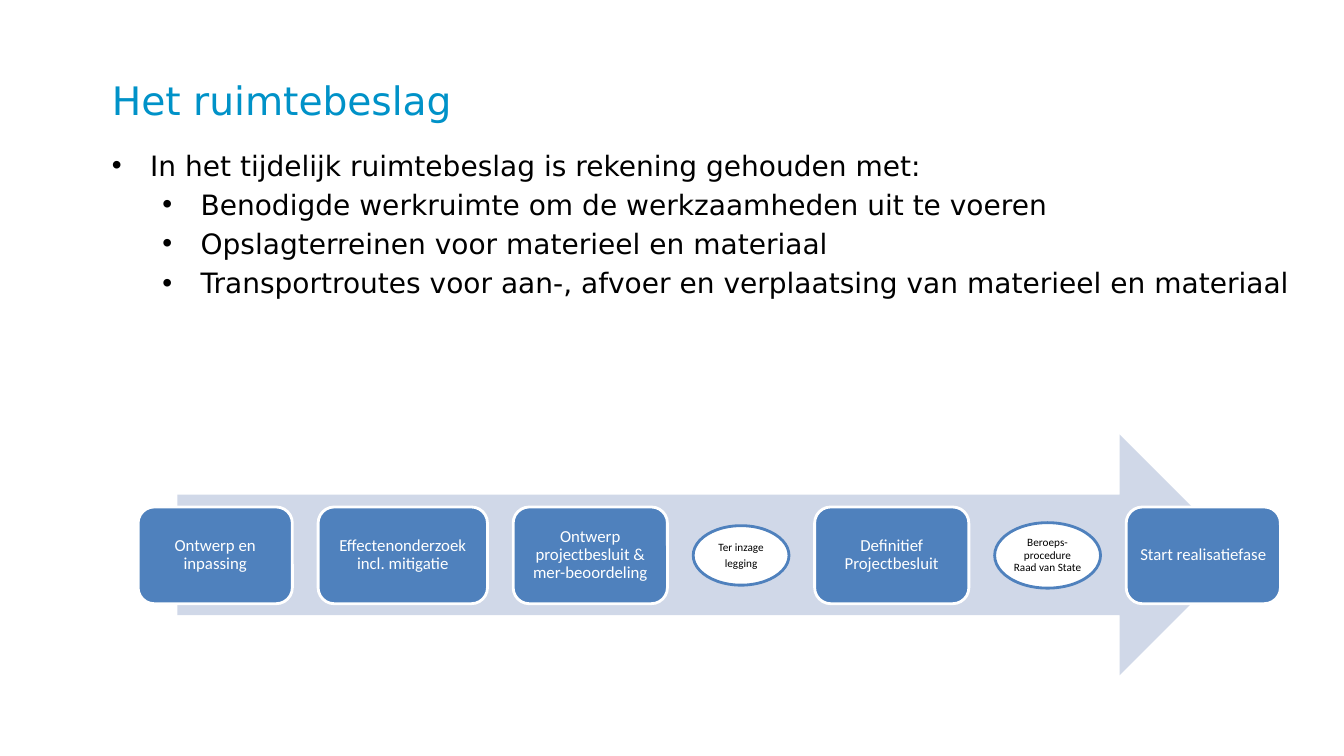
import pptx
import pptx.util
import pptx.dml.color
import pptx.enum.shapes
import pptx.enum.text
import pptx.oxml.ns
import lxml.etree

Inches = pptx.util.Inches
Pt = pptx.util.Pt
RGBColor = pptx.dml.color.RGBColor
Shape = pptx.enum.shapes.MSO_SHAPE
Align = pptx.enum.text.PP_ALIGN
Anchor = pptx.enum.text.MSO_ANCHOR

TITLE = "Het ruimtebeslag"
BULLETS = [
    (0, "In het tijdelijk ruimtebeslag is rekening gehouden met:"),
    (1, "Benodigde werkruimte om de werkzaamheden uit te voeren"),
    (1, "Opslagterreinen voor materieel en materiaal"),
    (1, "Transportroutes voor aan-, afvoer en verplaatsing van materieel en materiaal"),
]
STEPS = [
    ("phase", 1.53, 0.96, ["Ontwerp en inpassing"]),
    ("phase", 1.68, 0.96, ["Effectenonderzoek incl. mitigatie"]),
    ("phase", 1.53, 0.96, ["Ontwerp projectbesluit & mer-beoordeling"]),
    ("procedure", 0.95, 0.59, ["Ter inzage", "legging"]),
    ("phase", 1.53, 0.96, ["Definitief Projectbesluit"]),
    ("procedure", 1.05, 0.65, ["Beroeps-procedure Raad van State"]),
    ("phase", 1.53, 0.96, ["Start realisatiefase"]),
]

WHITE = RGBColor(0xFF, 0xFF, 0xFF)
BLACK = RGBColor(0, 0, 0)
TITLE_BLUE = RGBColor(0x00, 0x92, 0xC8)
STEP_BLUE = RGBColor(0x4F, 0x81, 0xBD)
ARROW_BLUE = RGBColor(0xD0, 0xD8, 0xE8)

STEP_STYLES = {
    "phase": dict(kind=Shape.ROUNDED_RECTANGLE, fill=STEP_BLUE, line=WHITE,
                  color=WHITE, size=12, inset=0.05),
    "procedure": dict(kind=Shape.FLOWCHART_CONNECTOR, fill=WHITE, line=STEP_BLUE,
                      color=BLACK, size=8, inset=0.03),
}
STEPS_LEFT = 1.37
STEPS_MIDDLE = 5.51
STEP_GAP = 0.25 + 0.005


def add_bullet(para, level):
    para.level = level
    properties = para._p.get_or_add_pPr()
    properties.set("marL", str(Inches(0.38 + 0.5 * level)))
    properties.set("indent", str(Inches(-0.38)))
    for tag, name, value in [("a:buFont", "typeface", "Arial"), ("a:buChar", "char", "•")]:
        element = lxml.etree.SubElement(properties, pptx.oxml.ns.qn(tag))
        element.set(name, value)


def write_text(box, texts, *, size, color, font, insets, anchor=Anchor.TOP,
               align=Align.LEFT, levels=None, spacing=None, before=0, after=0):
    frame = box.text_frame
    frame.word_wrap = True
    frame.vertical_anchor = anchor
    (frame.margin_left, frame.margin_top,
     frame.margin_right, frame.margin_bottom) = map(Inches, insets)
    for index, text in enumerate(texts):
        para = frame.add_paragraph() if index else frame.paragraphs[0]
        para.alignment = align
        para.line_spacing = spacing
        para.space_before = Pt(before if index else 0)
        para.space_after = Pt(after)
        if levels:
            add_bullet(para, levels[index])
        span = para.add_run()
        span.text = text
        span.font.size = Pt(size)
        span.font.name = font
        span.font.color.rgb = color


def add_shape(page, kind, left, top, width, height, fill, line=None):
    shape = page.shapes.add_shape(kind, *map(Inches, (left, top, width, height)))
    shape.shadow.inherit = False
    shape.fill.solid()
    shape.fill.fore_color.rgb = fill
    if line is None:
        shape.line.fill.background()
    else:
        shape.line.color.rgb = line
        shape.line.width = Pt(2)
    return shape


def add_steps(page):
    left = STEPS_LEFT
    for style_name, width, height, texts in STEPS:
        style = STEP_STYLES[style_name]
        shape = add_shape(page, style["kind"], left, STEPS_MIDDLE - height / 2,
                          width, height, style["fill"], style["line"])
        write_text(shape, texts, size=style["size"], color=style["color"], font="Calibri",
                   insets=[style["inset"]] * 4, anchor=Anchor.MIDDLE, align=Align.CENTER,
                   spacing=0.9, after=0.35 * style["size"] if len(texts) > 1 else 0)
        left += width + STEP_GAP


def main():
    deck = pptx.Presentation()
    deck.slide_width = Inches(13.33)
    deck.slide_height = Inches(7.5)
    page = deck.slides.add_slide(deck.slide_layouts[6])

    text_insets = (0, 0.05, 0.1, 0.05)
    title = page.shapes.add_textbox(*map(Inches, (1.11, 0.33, 11.83, 0.94)))
    write_text(title, [TITLE], size=28, color=TITLE_BLUE, font="DejaVu Sans",
               insets=text_insets, anchor=Anchor.BOTTOM)
    body = page.shapes.add_textbox(*map(Inches, (1.11, 1.42, 11.83, 4.95)))
    write_text(body, [text for level, text in BULLETS], size=20, color=BLACK,
               font="DejaVu Sans", insets=text_insets,
               levels=[level for level, text in BULLETS], before=4)

    add_shape(page, Shape.RIGHT_ARROW, 1.76, 4.31, 10.54, 2.39, ARROW_BLUE)
    add_steps(page)
    deck.save("out.pptx")


if __name__ == "__main__":
    main()
